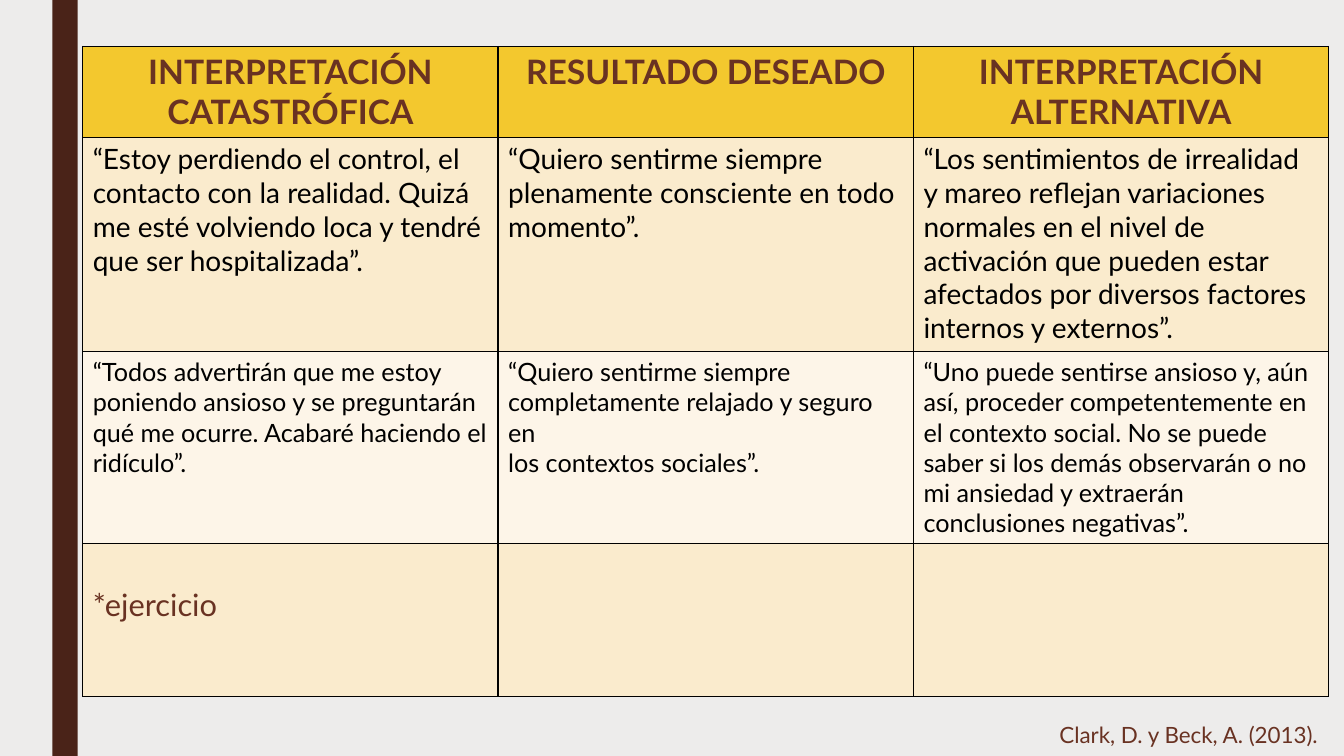
from dataclasses import dataclass

from lxml import etree
from pptx import Presentation
from pptx.dml.color import RGBColor
from pptx.enum.shapes import MSO_SHAPE
from pptx.enum.text import PP_ALIGN
from pptx.oxml.ns import qn
from pptx.slide import Slide
from pptx.table import _Cell
from pptx.text.text import TextFrame
from pptx.util import Inches, Pt

RECTANGLE = MSO_SHAPE.RECTANGLE
LEFT, CENTER, RIGHT = PP_ALIGN.LEFT, PP_ALIGN.CENTER, PP_ALIGN.RIGHT

FONT = "Lato"
COLORS = {
    "background": "EDECEB",
    "bar": "4A2318",
    "brown": "693222",
    "black": "000000",
    "header": "F3C82E",
    "cream": "FAEBCD",
    "pale": "FDF5E8",
}
COLUMN_WIDTH = 4.12
BORDER_WIDTH = Pt(1)


@dataclass
class TableRow:
    height: float
    fill: str
    size: int
    texts: tuple[str, str, str]
    color: str = "black"
    bold: bool = False
    align: PP_ALIGN = LEFT
    margin_top: float = 0.05


ROWS = [
    TableRow(0.9, "header", 24, (
        "INTERPRETACIÓN CATASTRÓFICA",
        "RESULTADO DESEADO",
        "INTERPRETACIÓN ALTERNATIVA",
    ), color="brown", bold=True, align=CENTER),
    TableRow(2.13, "cream", 20, (
        "“Estoy perdiendo el control, el contacto con la realidad. Quizá me esté "
        "volviendo loca y tendré que ser hospitalizada”.",
        "“Quiero sentirme siempre plenamente consciente en todo momento”.",
        "“Los sentimientos de irrealidad y mareo reflejan variaciones normales en "
        "el nivel de activación que pueden estar afectados por diversos factores "
        "internos y externos”.",
    )),
    TableRow(1.9, "pale", 18, (
        "“Todos advertirán que me estoy poniendo ansioso y se preguntarán qué me "
        "ocurre. Acabaré haciendo el ridículo”.",
        "“Quiero sentirme siempre completamente relajado y seguro en\n"
        "los contextos sociales”.",
        "“Uno puede sentirse ansioso y, aún así, proceder competentemente en el "
        "contexto social. No se puede saber si los demás observarán o no mi "
        "ansiedad y extraerán conclusiones negativas”.",
    )),
    TableRow(1.52, "cream", 22, ("*ejercicio", "", ""), color="brown", margin_top=0.42),
]


def rgb(name: str) -> RGBColor:
    return RGBColor.from_string(COLORS[name])


def set_text(tf: TextFrame, text: str, size: int, color: str,
             bold: bool = False, align: PP_ALIGN = LEFT) -> None:
    tf.text = text
    for p in tf.paragraphs:
        p.alignment = align
        for r in p.runs:
            r.font.name = FONT
            r.font.size = Pt(size)
            r.font.bold = bold
            r.font.color.rgb = rgb(color)


def set_borders(cell: _Cell) -> None:
    tc_pr = cell._tc.get_or_add_tcPr()
    for side in ("a:lnL", "a:lnR", "a:lnT", "a:lnB"):
        ln = etree.SubElement(tc_pr, qn(side), w=str(BORDER_WIDTH))
        fill = etree.SubElement(ln, qn("a:solidFill"))
        etree.SubElement(fill, qn("a:srgbClr"), val=COLORS["black"])


def add_bar(s: Slide) -> None:
    sp = s.shapes.add_shape(RECTANGLE, Inches(0.52), 0, Inches(0.25), Inches(7.5))
    sp.shadow.inherit = False
    sp.fill.solid()
    sp.fill.fore_color.rgb = rgb("bar")
    sp.line.fill.background()


def add_interpretations(s: Slide, rows: list[TableRow]) -> None:
    columns = len(rows[0].texts)
    table = s.shapes.add_table(
        len(rows), columns, Inches(0.82), Inches(0.46),
        Inches(COLUMN_WIDTH * columns), Inches(sum(row.height for row in rows)),
    ).table
    for column in table.columns:
        column.width = Inches(COLUMN_WIDTH)
    for i, row in enumerate(rows):
        table.rows[i].height = Inches(row.height)
        for j, text in enumerate(row.texts):
            cell = table.cell(i, j)
            cell.margin_top = Inches(row.margin_top)
            set_borders(cell)
            cell.fill.solid()
            cell.fill.fore_color.rgb = rgb(row.fill)
            set_text(cell.text_frame, text, row.size, row.color, row.bold, row.align)


def add_citation(s: Slide) -> None:
    sp = s.shapes.add_textbox(Inches(8.95), Inches(7.11), Inches(4.22), Inches(0.37))
    tf = sp.text_frame
    tf.word_wrap = True
    set_text(tf, "Clark, D. y Beck, A. (2013).", 16, "brown", align=RIGHT)


def main() -> None:
    prs = Presentation()
    prs.slide_width = Inches(13.33)
    prs.slide_height = Inches(7.5)
    s = prs.slides.add_slide(prs.slide_layouts[6])
    s.background.fill.solid()
    s.background.fill.fore_color.rgb = rgb("background")
    add_bar(s)
    add_interpretations(s, ROWS)
    add_citation(s)
    prs.save("out.pptx")


if __name__ == "__main__":
    main()
